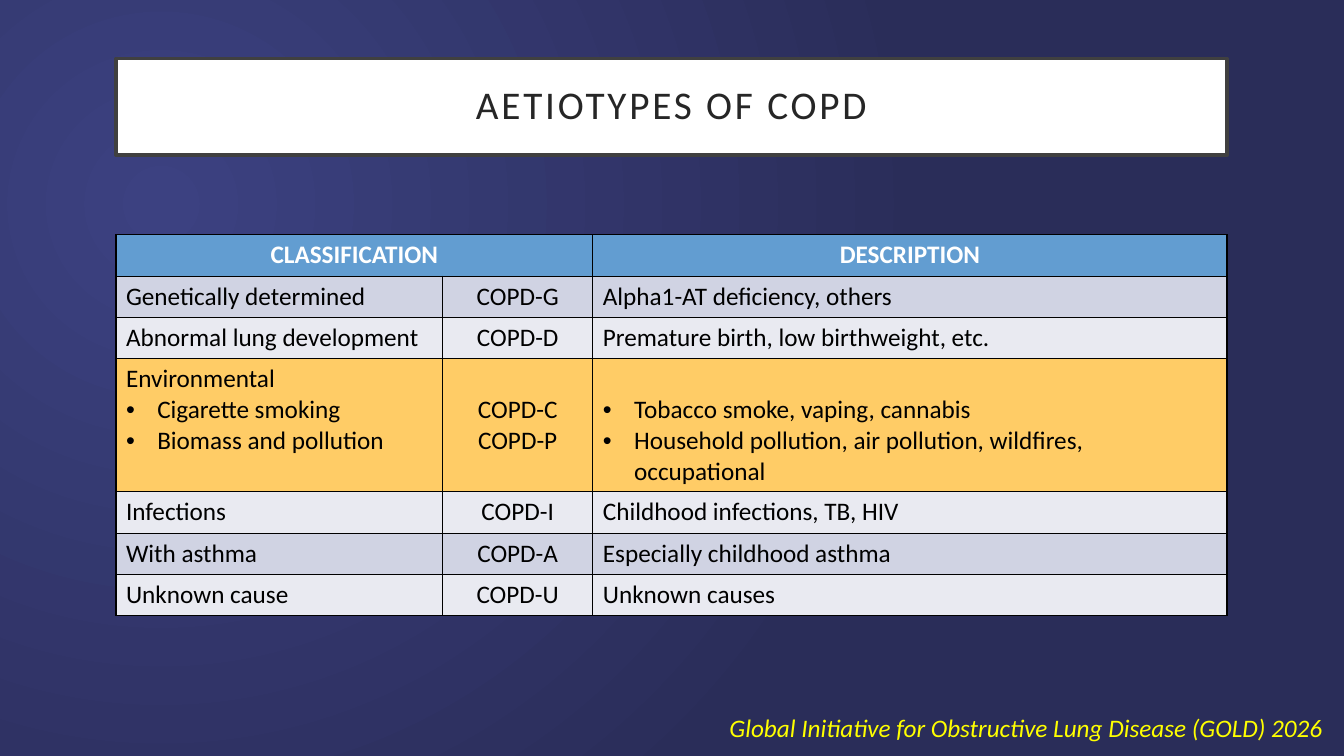
from lxml import etree
from pptx import Presentation
from pptx.dml.color import RGBColor
from pptx.enum import text as t
from pptx.oxml import ns
from pptx.util import Inches, Pt

TITLE = "AETIOTYPES OF COPD"
SOURCE = "Global Initiative for Obstructive Lung Disease (GOLD) 2026"
HEAD = ["CLASSIFICATION", "", "DESCRIPTION"]
# Each cell is a list of lines; a leading • marks a bullet
ROWS = [
    (["Genetically determined"], ["COPD-G"], ["Αlpha1-AT deficiency, others"]),
    (["Abnormal lung development"], ["COPD-D"],
     ["Premature birth, low birthweight, etc."]),
    (["Environmental", "•Cigarette smoking", "•Biomass and pollution"],
     ["COPD-C", "COPD-P"],
     ["•Tobacco smoke, vaping, cannabis",
      "•Household pollution, air pollution, wildfires, occupational"]),
    (["Infections"], ["COPD-I"], ["Childhood infections, TB, HIV"]),
    (["With asthma"], ["COPD-A"], ["Especially childhood asthma"]),
    (["Unknown cause"], ["COPD-U"], ["Unknown causes"]),
]
KEY = 3  # the highlighted, taller row
LEFT, WIDTH = 1.15, 11.02
COLS = [3.24, 1.49, 6.29]
ROW_H, KEY_H = 0.41, 1.32

FONT = "Calibri"
BLACK = RGBColor(0, 0, 0)
WHITE = RGBColor(255, 255, 255)
INK = RGBColor(0x26, 0x26, 0x26)
EDGE = RGBColor(0x40, 0x40, 0x40)
BLUE = RGBColor(0x62, 0x9D, 0xD1)
GOLD = RGBColor(0xFF, 0xCC, 0x66)
BANDS = [RGBColor(0xE9, 0xEA, 0xF1), RGBColor(0xD0, 0xD3, 0xE3)]
YELLOW = RGBColor(255, 255, 0)
GLOW = [RGBColor(0x3C, 0x41, 0x81), RGBColor(0x2A, 0x2D, 0x59)]
MID, RIGHT = t.PP_ALIGN.CENTER, t.PP_ALIGN.RIGHT


def sub(node, tag, **attrs):
    return etree.SubElement(node, ns.qn(tag), attrs)


def add_run(para, words, color, size=18, bold=False, italic=False):
    run = para.add_run()
    run.text = words
    font = run.font
    font.name, font.size, font.bold, font.italic = FONT, Pt(size), bold, italic
    font.color.rgb = color
    return run


def add_bullet(para):
    props = para._p.get_or_add_pPr()
    props.set("marL", str(Inches(0.31)))
    props.set("indent", str(-Inches(0.31)))
    sub(props, "a:buFont", typeface="Arial")
    sub(props, "a:buChar", char="•")


def fill_cell(cell, lines, fill, color, align, bold):
    props = cell._tc.get_or_add_tcPr()
    for side in "LRTB":
        line = sub(props, "a:ln" + side, w=str(Pt(1)))
        sub(sub(line, "a:solidFill"), "a:srgbClr", val=str(BLACK))
    cell.fill.solid()
    cell.fill.fore_color.rgb = fill
    for i, words in enumerate(lines):
        frame = cell.text_frame
        para = frame.add_paragraph() if i else frame.paragraphs[0]
        if words.startswith("•"):
            add_bullet(para)
        para.alignment = align
        add_run(para, words.lstrip("•"), color, bold=bold)


def main():
    deck = Presentation()
    deck.slide_width, deck.slide_height = Inches(13.33), Inches(7.5)
    slide = deck.slides.add_slide(deck.slide_layouts[5])

    # Background glow
    back = slide.background.fill
    back.gradient()
    for stop, color in zip(back.gradient_stops, GLOW):
        stop.color.rgb = color
    grad = slide._element.find(".//" + ns.qn("a:gradFill"))
    grad.remove(grad.find(ns.qn("a:lin")))
    sub(sub(grad, "a:path", path="circle"), "a:fillToRect",
        l="50000", t="55000", r="125000", b="100000")

    # Title
    title = slide.shapes.title
    title.left, title.top = Inches(LEFT), Inches(0.58)
    title.width, title.height = Inches(WIDTH), Inches(0.96)
    title.fill.solid()
    title.fill.fore_color.rgb = WHITE
    title.line.color.rgb = EDGE
    title.line.width = Pt(2.5)
    frame = title.text_frame
    frame.auto_size = t.MSO_AUTO_SIZE.NONE
    frame.vertical_anchor = t.MSO_ANCHOR.MIDDLE
    frame.margin_left = frame.margin_right = Inches(0.2)
    frame.margin_top = frame.margin_bottom = Inches(0.2)
    para = frame.paragraphs[0]
    para.alignment, para.line_spacing = MID, 0.9
    run = add_run(para, TITLE, INK, 28)
    run.font._element.set("spc", "200")

    # Table
    high = ROW_H * len(ROWS) + KEY_H
    grid = slide.shapes.add_table(
        len(ROWS) + 1, len(COLS), Inches(LEFT), Inches(2.33),
        Inches(WIDTH), Inches(high)).table
    for col, wide in zip(grid.columns, COLS):
        col.width = Inches(wide)
    for r, row in enumerate([[[h] if h else [] for h in HEAD]] + ROWS):
        grid.rows[r].height = Inches(KEY_H if r == KEY else ROW_H)
        fill = {0: BLUE, KEY: GOLD}.get(r, BANDS[r % 2])
        for c, lines in enumerate(row):
            fill_cell(grid.cell(r, c), lines, fill, BLACK if r else WHITE,
                      MID if r == 0 or c == 1 else t.PP_ALIGN.LEFT, r == 0)
    grid.cell(0, 0).merge(grid.cell(0, 1))
    # Codes and descriptions line up with the bulleted causes
    grid.cell(KEY, 1).vertical_anchor = t.MSO_ANCHOR.MIDDLE
    grid.cell(KEY, 2).vertical_anchor = t.MSO_ANCHOR.BOTTOM

    # Source line
    note = slide.shapes.add_textbox(
        Inches(6.55), Inches(7.02), Inches(6.67), Inches(0.4)).text_frame
    note.word_wrap = True
    note.paragraphs[0].alignment = RIGHT
    add_run(note.paragraphs[0], SOURCE, YELLOW, italic=True)

    deck.save("out.pptx")


if __name__ == "__main__":
    main()
